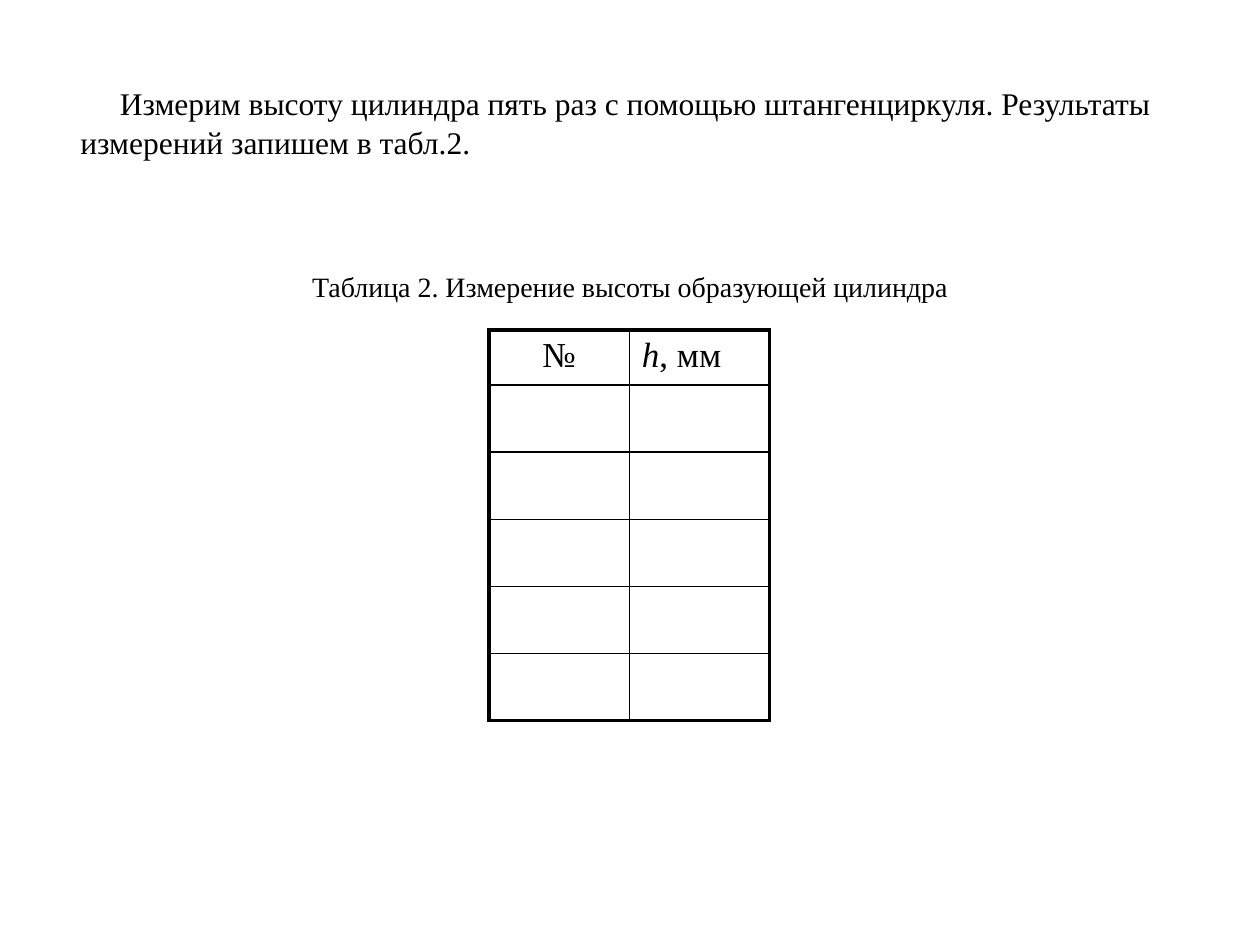
from lxml.etree import SubElement
from pptx import Presentation
from pptx.dml.color import RGBColor
from pptx.enum.text import PP_ALIGN as Align
from pptx.oxml.ns import qn
from pptx.util import Pt

COLORS = {"ink": "000000"}
FONT = "Times New Roman"
TEXTS = [
    {"text": "Измерим высоту цилиндра пять раз с помощью штангенциркуля. "
             "Результаты измерений запишем в табл.2.",
     "box": (38.9, 43.2, 643, 50.4), "size": 18, "align": Align.LEFT, "indent": 22.5},
    {"text": "Таблица 2. Измерение высоты образующей цилиндра",
     "box": (155.5, 149.8, 409, 26.6), "size": 16, "align": Align.CENTER, "indent": 0},
]
HEADERS = [
    {"runs": [("№", False)], "align": Align.CENTER},
    {"runs": [("h", True), (", мм", False)], "align": Align.LEFT},
]
EMPTY_ROWS = 5
TABLE_LEFT, TABLE_TOP = 279.4, 188.6
COLUMN_WIDTH, HEADER_HEIGHT, ROW_HEIGHT = 80.2, 31.4, 38.4
CELL_SIZE, OUTER_LINE, INNER_LINE = 20, 2.25, 1


def format_font(font, size):
    font.name = FONT
    font.size = Pt(size)
    font.color.rgb = RGBColor.from_string(COLORS["ink"])


def add_text(slide, text, box, size, align, indent):
    shape = slide.shapes.add_textbox(*map(Pt, box))
    shape.text_frame.word_wrap = True
    shape.text_frame.text = text
    paragraph = shape.text_frame.paragraphs[0]
    paragraph.alignment = align
    paragraph.line_spacing = 1.05
    paragraph._p.get_or_add_pPr().set("indent", str(Pt(indent)))
    format_font(paragraph.runs[0].font, size)


def set_borders(cell, widths):
    properties = cell._tc.get_or_add_tcPr()
    for position, (side, width) in enumerate(widths.items()):
        line = properties.makeelement(qn(f"a:ln{side}"), {"w": str(Pt(width))})
        fill = SubElement(line, qn("a:solidFill"))
        SubElement(fill, qn("a:srgbClr"), val=COLORS["ink"])
        properties.insert(position, line)


def add_measurements(slide):
    row_count, column_count = EMPTY_ROWS + 1, len(HEADERS)
    height = HEADER_HEIGHT + EMPTY_ROWS * ROW_HEIGHT
    table = slide.shapes.add_table(
        row_count, column_count, Pt(TABLE_LEFT), Pt(TABLE_TOP),
        Pt(column_count * COLUMN_WIDTH), Pt(height)).table
    table.first_row = table.horz_banding = False
    for column in table.columns:
        column.width = Pt(COLUMN_WIDTH)
    for index, row in enumerate(table.rows):
        row.height = Pt(ROW_HEIGHT if index else HEADER_HEIGHT)
        for number, cell in enumerate(row.cells):
            cell.fill.background()
            outer_sides = {"L": number == 0, "R": number == column_count - 1,
                           "T": index == 0, "B": index == row_count - 1}
            set_borders(cell, {side: OUTER_LINE if outer else INNER_LINE
                               for side, outer in outer_sides.items()})
    for cell, header in zip(table.rows[0].cells, HEADERS):
        paragraph = cell.text_frame.paragraphs[0]
        paragraph.alignment = header["align"]
        for text, italic in header["runs"]:
            run = paragraph.add_run()
            run.text = text
            format_font(run.font, CELL_SIZE)
            run.font.italic = italic


def main():
    presentation = Presentation()
    presentation.slide_width, presentation.slide_height = Pt(720), Pt(540)
    slide = presentation.slides.add_slide(presentation.slide_layouts[6])
    add_measurements(slide)
    for item in TEXTS:
        add_text(slide, **item)
    presentation.save("out.pptx")


if __name__ == "__main__":
    main()
